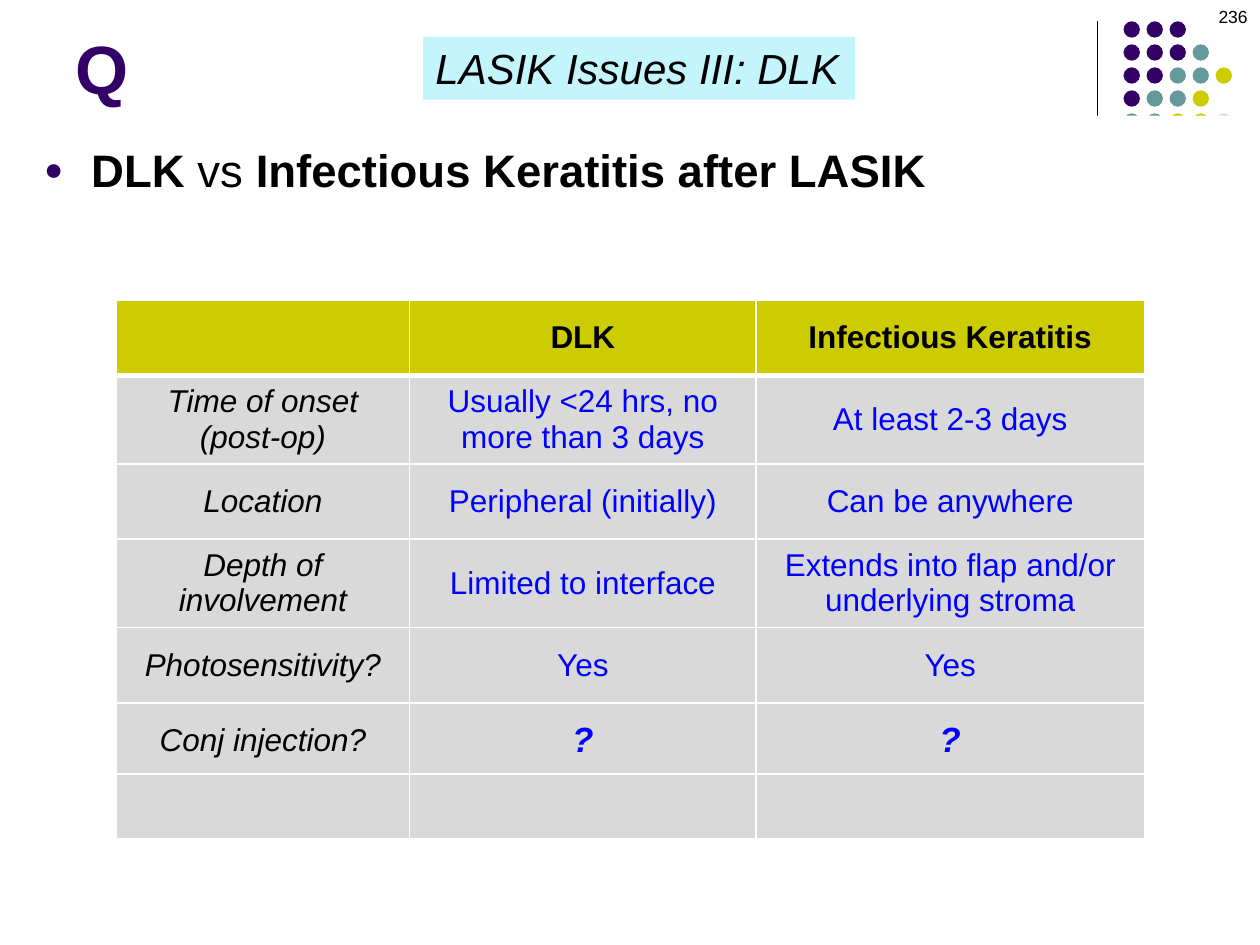
from dataclasses import dataclass

from lxml.etree import SubElement
from pptx import Presentation
from pptx.dml.color import RGBColor as RGB
from pptx.enum.shapes import MSO_CONNECTOR as CONN, MSO_SHAPE as SHAPE
from pptx.enum.text import MSO_ANCHOR as ANCHOR, MSO_AUTO_SIZE as AUTO, PP_ALIGN as ALIGN
from pptx.oxml.ns import qn
from pptx.util import Cm, Pt


@dataclass(frozen=True)
class Theme:
    font: str = "Arial"
    ink: str = "000000"
    paper: str = "FFFFFF"
    purple: str = "330066"
    teal: str = "669999"
    olive: str = "CCCC00"
    mist: str = "D8D8EC"
    tag: str = "C4F5FC"
    answer: str = "0000FF"
    cell: str = "D9D9D9"
    title: float = 39
    body: float = 26
    topic: float = 24
    query: float = 20
    table: float = 18
    number: float = 10


T = Theme()
COLS = [5.92, 6.98, 7.83]
ROW_HEIGHTS = [1.52, 1.78, 1.52, 1.78, 1.52, 1.52]
ROWS = [
    ["", "DLK", "Infectious Keratitis"],
    ["Time of onset (post-op)", "Usually <24 hrs, no more than 3 days", "At least 2-3 days"],
    ["Location", "Peripheral (initially)", "Can be anywhere"],
    ["Depth of involvement", "Limited to interface",
     "Extends into flap and/or underlying stroma"],
    ["Photosensitivity?", "Yes", "Yes"],
    ["Conj injection?", "?", "?"],
]
# One letter per dot: purple, teal, olive, mist
DOTS = ["ppp", "pppt", "pptto", "ptto", "ttoom"]
DOT_COLORS = {"p": T.purple, "t": T.teal, "o": T.olive, "m": T.mist}


def cm(*values):
    return [Cm(v) for v in values]


def add_run(p, text, size, color=T.ink, **fmt):
    r = p.add_run()
    r.text = text
    values = {"name": T.font, "size": Pt(size), "bold": False, "italic": False, **fmt}
    for name, value in values.items():
        setattr(r.font, name, value)
    r.font.color.rgb = RGB.from_string(color)


def add_filled(slide, kind, box, color):
    sp = slide.shapes.add_shape(kind, *cm(*box))
    sp.shadow.inherit = False
    sp.fill.solid()
    sp.fill.fore_color.rgb = RGB.from_string(color)
    sp.line.fill.background()
    return sp


def add_text_box(slide, box):
    tf = slide.shapes.add_textbox(*cm(*box)).text_frame
    tf.word_wrap = True
    return tf.paragraphs[0]


def add_corner(slide, x, y, pitch=0.464, size=0.33):
    """Rule and dot pattern, cut off below by a white panel."""
    rule = slide.shapes.add_connector(CONN.STRAIGHT, *cm(x, y, x, y + 4.22))
    rule.line.color.rgb = RGB.from_string(T.ink)
    rule.line.width = Pt(0.75)
    SubElement(rule._element.spPr, qn("a:effectLst"))
    for i, row in enumerate(DOTS):
        for j, key in enumerate(row):
            box = (x + 0.53 + j * pitch, y + i * pitch, size, size)
            add_filled(slide, SHAPE.OVAL, box, DOT_COLORS[key])
    add_filled(slide, SHAPE.RECTANGLE, (x - 0.96, y + 1.9, 3.81, 2.74), T.paper)


def add_title(slide, box):
    sp = slide.shapes.title
    sp.left, sp.top, sp.width, sp.height = cm(*box)
    tf = sp.text_frame
    tf.auto_size, tf.vertical_anchor = AUTO.NONE, ANCHOR.BOTTOM
    p = tf.paragraphs[0]
    p.alignment = ALIGN.LEFT
    add_run(p, "Q", T.title, T.purple, bold=True)


def add_body(slide, box):
    p = add_text_box(slide, box)
    p.space_before = Pt(5)
    pPr = p._p.get_or_add_pPr()
    pPr.set("marL", str(Cm(0.95)))
    pPr.set("indent", str(Cm(-0.95)))
    color = SubElement(pPr, qn("a:buClr"))
    SubElement(color, qn("a:srgbClr"), val=T.purple)
    SubElement(pPr, qn("a:buSzPct"), val="70000")
    SubElement(pPr, qn("a:buFont"), typeface=T.font)
    SubElement(pPr, qn("a:buChar"), char="●")
    add_run(p, "DLK", T.body, bold=True)
    add_run(p, " vs ", T.body)
    add_run(p, "Infectious Keratitis after LASIK", T.body, bold=True)


def add_topic(slide, box):
    tf = add_filled(slide, SHAPE.RECTANGLE, box, T.tag).text_frame
    tf.word_wrap, tf.auto_size = False, AUTO.SHAPE_TO_FIT_TEXT
    p = tf.paragraphs[0]
    p.alignment = ALIGN.LEFT
    add_run(p, "LASIK Issues III: DLK", T.topic, italic=True)


def add_number(slide, box):
    p = add_text_box(slide, box)
    p.alignment = ALIGN.RIGHT
    add_run(p, "236", T.number)


def set_borders(cell, top=1, bottom=1):
    tcPr = cell._tc.get_or_add_tcPr()
    for side, width in {"L": 1, "R": 1, "T": top, "B": bottom}.items():
        ln = SubElement(tcPr, qn(f"a:ln{side}"), w=str(Pt(width)))
        SubElement(SubElement(ln, qn("a:solidFill")), qn("a:srgbClr"), val=T.paper)


def cell_format(row, col, text):
    if row == 0:
        return {"size": T.table, "bold": True}
    if col == 0:
        return {"size": T.table, "italic": True}
    if text == "?":
        return {"size": T.query, "color": T.answer, "bold": True, "italic": True}
    return {"size": T.table, "color": T.answer}


def add_grid(slide, x, y, rows, heights, header=True):
    frame = slide.shapes.add_table(len(rows), len(COLS), *cm(x, y, sum(COLS), sum(heights)))
    table = frame.table
    table.first_row = table.horz_banding = False
    for col, width in zip(table.columns, COLS):
        col.width = Cm(width)
    for i, (texts, height) in enumerate(zip(rows, heights)):
        table.rows[i].height = Cm(height)
        is_head = header and i == 0
        for j, text in enumerate(texts):
            cell = table.cell(i, j)
            # A thick rule parts the header from the first row
            set_borders(cell, 3 if header and i == 1 else 1, 3 if is_head else 1)
            cell.fill.solid()
            cell.fill.fore_color.rgb = RGB.from_string(T.olive if is_head else T.cell)
            cell.vertical_anchor = ANCHOR.MIDDLE
            if text:
                p = cell.text_frame.paragraphs[0]
                p.alignment = ALIGN.CENTER
                add_run(p, text, **cell_format(i, j, text))


def main():
    prs = Presentation()
    prs.slide_width, prs.slide_height = cm(25.4, 19.05)
    slide = prs.slides.add_slide(prs.slide_layouts[5])
    add_corner(slide, 22.12, 0.43)
    add_title(slide, (1.27, 0.33, 20.96, 1.98))
    add_body(slide, (0.64, 2.74, 24.13, 15.44))
    add_topic(slide, (8.53, 0.74, 8.71, 1.27))
    add_number(slide, (19.48, 0, 5.92, 1.27))
    # Comparison, then the blank row still to be filled in
    add_grid(slide, 2.34, 6.05, ROWS, ROW_HEIGHTS)
    add_grid(slide, 2.34, 15.6, [[""] * len(COLS)], [1.3], header=False)
    prs.save("out.pptx")


if __name__ == "__main__":
    main()
